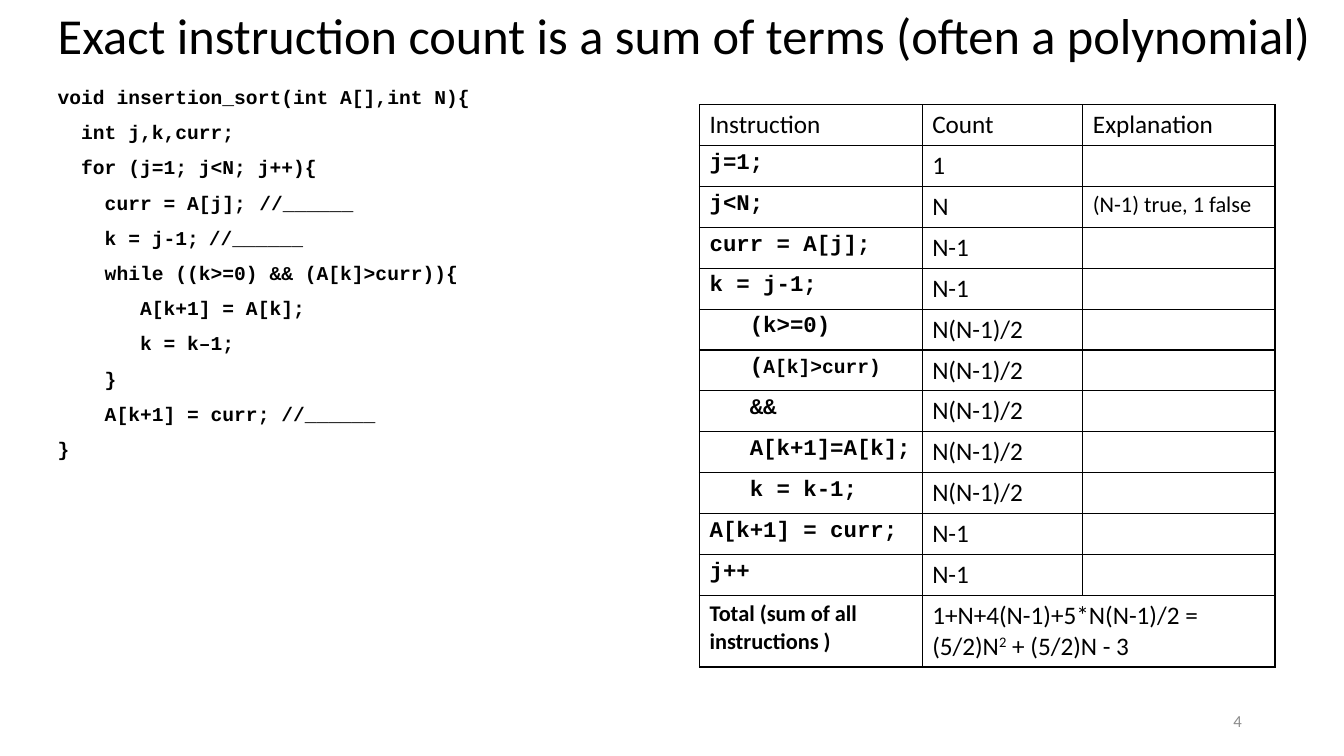
"""Build a slide that counts the instructions of insertion sort."""
from lxml.etree import SubElement
from pptx import Presentation
from pptx.dml.color import RGBColor
from pptx.enum.text import MSO_ANCHOR as Anchor, MSO_AUTO_SIZE as AutoSize, PP_ALIGN as Align
from pptx.oxml.ns import qn
from pptx.util import Cm, Pt

COLORS = {"text": "000000", "number": "8C8C8C"}
BODY_FONT, CODE_FONT = "Calibri", "Courier New"


def style_runs(paragraph, name, size, bold=False, color="text"):
    for run in paragraph.runs:
        run.font.name = name
        run.font.size = Pt(size)
        run.font.bold = bold
        run.font.color.rgb = RGBColor.from_string(COLORS[color])


def place(shape, left, top, width, height):
    shape.left, shape.top = Cm(left), Cm(top)
    shape.width, shape.height = Cm(width), Cm(height)
    shape.text_frame.word_wrap = True
    shape.text_frame.auto_size = AutoSize.NONE


presentation = Presentation()
presentation.slide_width, presentation.slide_height = Cm(33.87), Cm(19.05)
slide = presentation.slides.add_slide(presentation.slide_layouts[1])
title, code = slide.placeholders

place(title, 1.2, 0.05, 32.38, 1.83)
title.text_frame.text = "Exact instruction count is a sum of terms (often a polynomial)"
title.text_frame.vertical_anchor = Anchor.MIDDLE
heading = title.text_frame.paragraphs[0]
heading.alignment = Align.LEFT
heading.line_spacing = 0.9
style_runs(heading, BODY_FONT, 36)

place(code, 1.2, 2.08, 14.5, 11.33)
code.text_frame.text = """void insertion_sort(int A[],int N){
  int j,k,curr;
  for (j=1; j<N; j++){
    curr = A[j];\t//______
    k = j-1;\t//______
    while ((k>=0) && (A[k]>curr)){
       A[k+1] = A[k];
       k = k–1;
    }
    A[k+1] = curr; //______
}"""
for index, paragraph in enumerate(code.text_frame.paragraphs):
    properties = paragraph._p.get_or_add_pPr()
    properties.set("marL", "0")
    properties.set("indent", "0")
    SubElement(properties, qn("a:buNone"))
    tabs = SubElement(properties, qn("a:tabLst"))
    SubElement(tabs, qn("a:tab"), pos=str(Cm(9.8)), algn="l")
    paragraph.line_spacing = 0.9
    paragraph.space_before = Pt(10 if index else 0)
    style_runs(paragraph, CODE_FONT, 14, bold=True)

counts = [
    ("Instruction", "Count", "Explanation"),
    ("j=1;", "1", ""),
    ("j<N;", "N", "(N-1) true, 1 false"),
    ("curr = A[j];", "N-1", ""),
    ("k = j-1;", "N-1", ""),
    ("   (k>=0)", "N(N-1)/2", ""),
    ("   (", "N(N-1)/2", ""),
    ("   &&", "N(N-1)/2", ""),
    ("   A[k+1]=A[k];", "N(N-1)/2", ""),
    ("   k = k-1;", "N(N-1)/2", ""),
    ("A[k+1] = curr;", "N-1", ""),
    ("j++", "N-1", ""),
    ("Total (sum of all instructions )", "1+N+4(N-1)+5*N(N-1)/2 = (5/2)N", ""),
]
total_row = len(counts) - 1
comparison_row = 6
table = slide.shapes.add_table(len(counts), 3, Cm(17.63), Cm(2.64), Cm(14.5), Cm(14.15)).table
table.first_row = table.horz_banding = False
for column, width in zip(table.columns, (5.61, 4.05, 4.84)):
    column.width = Cm(width)

for row_index, row_texts in enumerate(counts):
    table.rows[row_index].height = Cm(1.79 if row_index == total_row else 1.03)
    for column_index, text in enumerate(row_texts):
        cell = table.cell(row_index, column_index)
        for side in ("lnL", "lnR", "lnT", "lnB"):
            border = SubElement(cell._tc.get_or_add_tcPr(), qn(f"a:{side}"), w=str(Pt(1)))
            fill = SubElement(border, qn("a:solidFill"))
            SubElement(fill, qn("a:srgbClr"), val=COLORS["text"])
        cell.fill.background()
        if text:
            cell.text_frame.text = text
            paragraph = cell.text_frame.paragraphs[0]
            is_label = column_index == 0 and row_index > 0
            is_code = is_label and row_index < total_row
            is_small = is_label or (column_index == 2 and row_index > 0)
            style_runs(paragraph, CODE_FONT if is_code else BODY_FONT, 16 if is_small else 18, is_label)

comparison = table.cell(comparison_row, 0).text_frame.paragraphs[0]
comparison.add_run().text = "A[k]>curr)"
style_runs(comparison, CODE_FONT, 14, bold=True)
comparison.runs[0].font.size = Pt(16)

table.cell(total_row, 1).merge(table.cell(total_row, 2))
total = table.cell(total_row, 1).text_frame.paragraphs[0]
for text in ("2", " + (5/2)N - 3"):
    total.add_run().text = text
style_runs(total, BODY_FONT, 18)
total.runs[1].font._element.set("baseline", "30000")

number = slide.shapes.add_textbox(0, 0, 0, 0)
place(number, 23.93, 17.65, 7.62, 1.02)
number.text_frame.text = "4"
number.text_frame.vertical_anchor = Anchor.MIDDLE
number.text_frame.paragraphs[0].alignment = Align.RIGHT
style_runs(number.text_frame.paragraphs[0], BODY_FONT, 12, color="number")

presentation.save("out.pptx")
